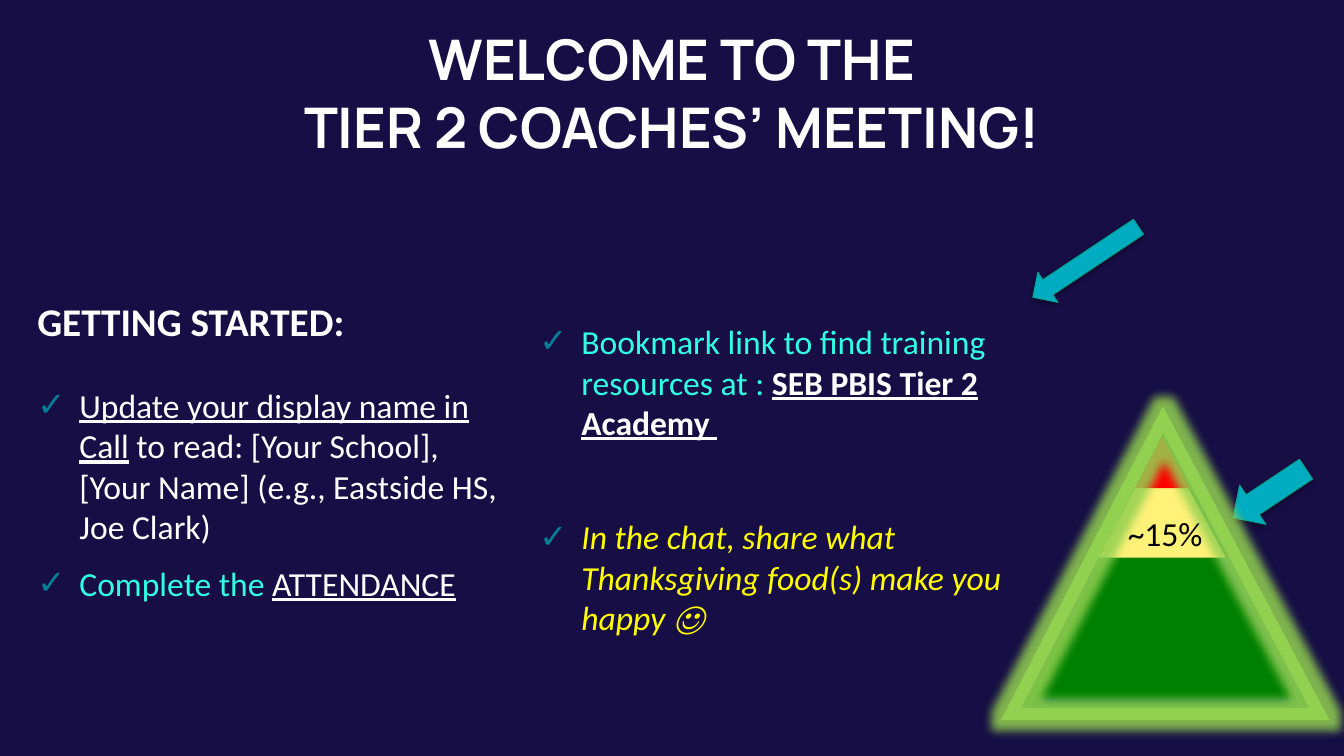
from lxml.etree import SubElement
from pptx import Presentation
from pptx.dml.color import RGBColor
from pptx.enum.shapes import MSO_SHAPE as Preset
from pptx.enum.text import MSO_ANCHOR as Anchor, MSO_AUTO_SIZE as AutoSize, PP_ALIGN as Align
from pptx.oxml import parse_xml
from pptx.oxml.ns import nsdecls, qn
from pptx.util import Cm, Pt

WHITE, AQUA, YELLOW, TEAL = "FFFFFF", "31FFE4", "FFFF00", "047E95"


def color(value):
    """Turn a hex string into a colour."""
    return RGBColor.from_string(value)


def place(item, box):
    """Put an item at left, top, width and height in centimetres."""
    item.left, item.top, item.width, item.height = (Cm(length) for length in box)


def frame_of(item, anchor, bottom=0.25):
    """Prepare the text frame of an item."""
    frame = item.text_frame
    frame.word_wrap = True
    frame.auto_size = AutoSize.NONE
    frame.vertical_anchor = anchor
    frame.margin_left = frame.margin_right = frame.margin_top = Cm(0.25)
    frame.margin_bottom = Cm(bottom)
    return frame


def write(para, text, font="Calibri", size=24, fill=WHITE, bold=False, italic=False, underline=False):
    """Add formatted text to a paragraph."""
    span = para.add_run()
    span.text = text
    span.font.name, span.font.size = font, Pt(size)
    span.font.color.rgb = color(fill)
    span.font.bold, span.font.italic, span.font.underline = bold, italic, underline


def bullet(para, mark=None):
    """Give a paragraph a hanging check mark, or no bullet."""
    props = para._p.get_or_add_pPr()
    indent = Cm(1.06) if mark else 0
    props.set("marL", str(indent))
    props.set("indent", str(-indent))
    if mark:
        SubElement(SubElement(props, qn("a:buClr")), qn("a:srgbClr")).set("val", TEAL)
        SubElement(props, qn("a:buChar")).set("char", mark)
    else:
        SubElement(props, qn("a:buNone"))


def add_effect(shape, xml):
    """Put one effect on a shape."""
    shape.shadow.inherit = False
    shape._element.spPr.find(qn("a:effectLst")).append(parse_xml(xml))


def title(page, box):
    """Fill the two-line title."""
    place(page.shapes.title, box)
    para = frame_of(page.shapes.title, Anchor.MIDDLE).paragraphs[0]
    para.alignment, para.line_spacing = Align.CENTER, 1.0
    style = dict(font="Manrope", size=40, bold=True)
    write(para, "WELCOME TO THE", **style)
    para.add_line_break()
    write(para, "TIER 2 COACHES’ MEETING!", **style)


def steps(holder, box, entries):
    """Fill a body placeholder with (mark, space before, spans) entries."""
    place(holder, box)
    frame = frame_of(holder, Anchor.BOTTOM, bottom=1.69)
    for number, (mark, before, spans) in enumerate(entries):
        para = frame.add_paragraph() if number else frame.paragraphs[0]
        bullet(para, mark)
        para.alignment, para.line_spacing = Align.LEFT, 1.0
        para.space_before, para.space_after = Pt(before), Pt(0)
        for text, style in spans:
            write(para, text, **style)


def arrow(page, box):
    """Draw a tilted arrow with a soft shadow."""
    shape = page.shapes.add_shape(Preset.LEFT_ARROW, 0, 0, 0, 0)
    place(shape, box)
    shape.rotation = 326.3
    shape.fill.solid()
    shape.fill.fore_color.rgb = color("00ACC2")
    shape.line.color.rgb = color("00A38E")
    shape.line.width = Pt(0.75)
    add_effect(shape, f'<a:outerShdw {nsdecls("a")} blurRad="{Pt(3.1)}" dist="{Pt(1.8)}" dir="5400000" '
                      'rotWithShape="0"><a:srgbClr val="000000"><a:alpha val="35000"/></a:srgbClr></a:outerShdw>')


def triangle(group, box, fill=None, line=None, width=0):
    """Draw one layer of the pyramid."""
    shape = group.shapes.add_shape(Preset.ISOSCELES_TRIANGLE, 0, 0, 0, 0)
    place(shape, box)
    shape.adjustments[0] = 0.493
    shape.shadow.inherit = False
    if fill:
        shape.fill.solid()
        shape.fill.fore_color.rgb = color(fill)
    else:
        shape.fill.background()
    if line:
        shape.line.color.rgb = color(line)
        shape.line.width = Pt(width)
        SubElement(shape.line._ln, qn("a:miter")).set("lim", "800000")
    else:
        shape.line.fill.background()
    return shape


def pyramid(page, box):
    """Draw the tiered pyramid with its glowing outline and label."""
    left, top, width, height = box
    group = page.shapes.add_group_shape()
    triangle(group, (left + 0.18, top + 0.38, 7.29, 6.83), "008000", "097233", 11)
    triangle(group, (left + 2.21, top + 0.48, 3.2, 3), "FFF278")
    triangle(group, (left + 3.12, top + 0.43, 1.4, 1.3), "FF0000")
    outline = triangle(group, box, line="92D050", width=8.75)
    add_effect(outline, f'<a:glow {nsdecls("a")} rad="{Pt(14)}"><a:srgbClr val="92D050">'
                        '<a:alpha val="85000"/></a:srgbClr></a:glow>')
    label = group.shapes.add_textbox(0, 0, 0, 0)
    place(label, (left + 2.62, top + 2.23, 2.72, 1.24))
    para = frame_of(label, Anchor.TOP).paragraphs[0]
    label.text_frame.margin_top = Cm(0.13)
    para.alignment = Align.CENTER
    write(para, "~15% ", fill="000000")


def welcome(deck):
    """Build the welcome slide."""
    page = deck.slides.add_slide(deck.slide_layouts[3])
    page.background.fill.solid()
    page.background.fill.fore_color.rgb = color("160E44")
    title(page, (2.54, 0.43, 28.78, 3.78))
    steps(page.placeholders[1], (0.69, 4.06, 12.17, 12.83), [
        (None, 0, [("GETTING STARTED:", dict(size=28, bold=True))]),
        ("✓", 29, [("Update your display name in Call", dict(underline=True)),
                   (" to read: [Your School], [Your Name] (e.g., Eastside HS, Joe Clark)", {})]),
        ("✓", 12, [("Complete the ", dict(fill=AQUA)), ("ATTENDANCE", dict(underline=True))]),
    ])
    arrow(page, (25.76, 6.15, 3.2, 0.91))
    arrow(page, (30.89, 11.84, 2.21, 1.19))
    pyramid(page, (25.48, 10.57, 7.77, 7.42))
    steps(page.placeholders[2], (13.34, 5.61, 13.11, 12.14), [
        ("✓", 0, [("Bookmark link to find training resources at : ", dict(fill=AQUA)),
                  ("SEB PBIS Tier 2 Academy", dict(bold=True, underline=True)),
                  (" ", dict(underline=True))]),
        ("✓", 53, [("In the chat, share what Thanksgiving food(s) make you happy ☺",
                    dict(fill=YELLOW, italic=True))]),
    ])


def main():
    """Create and save the deck."""
    deck = Presentation()
    deck.slide_width, deck.slide_height = Cm(33.87), Cm(19.05)
    welcome(deck)
    deck.save("out.pptx")


if __name__ == "__main__":
    main()
